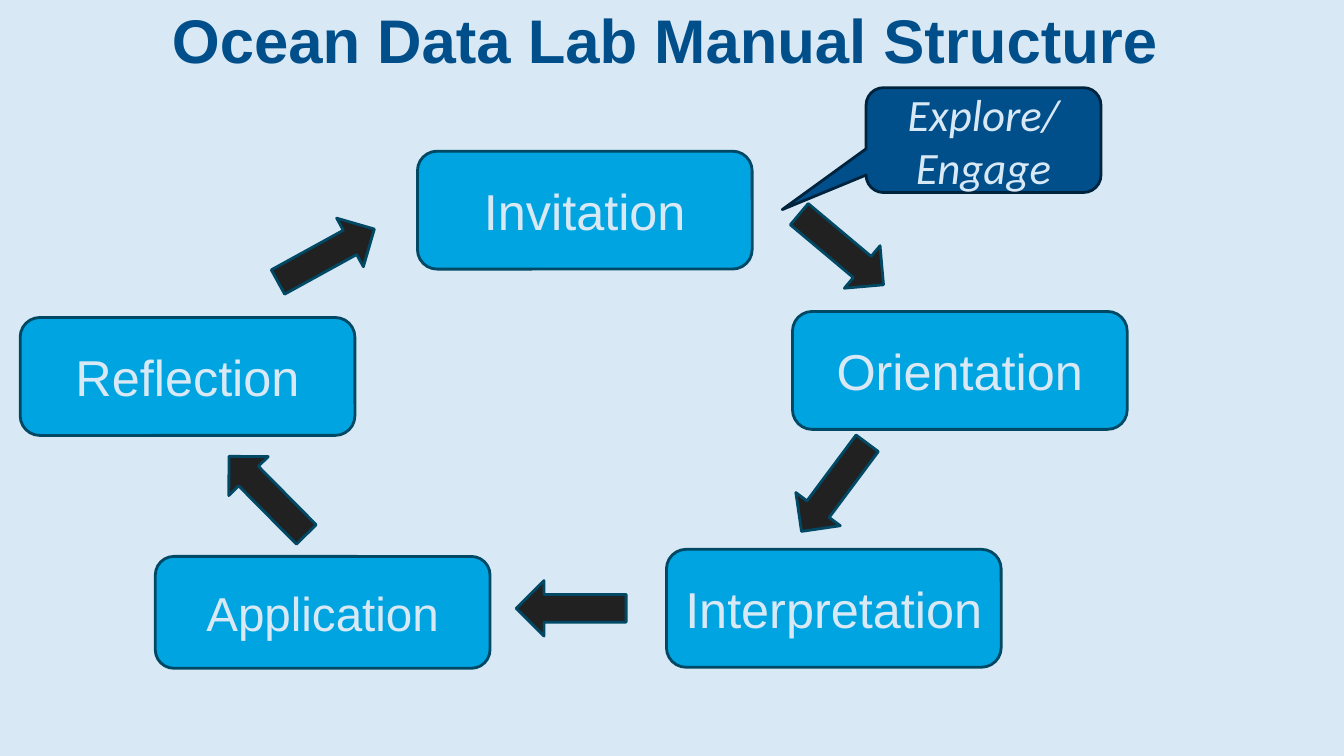
from pptx import Presentation
from pptx.dml.color import RGBColor
from pptx.enum.shapes import MSO_SHAPE as Preset
from pptx.enum.text import MSO_ANCHOR as Anchor, PP_ALIGN as Align
from pptx.util import Inches, Pt

COLORS = {
    "background": "D8E9F5",
    "navy": "004F8B",
    "navy_edge": "00233D",
    "sky": "00A4E1",
    "edge": "004863",
    "arrow": "212121",
}
STEPS = [
    ("Invitation", 4.14, 1.5, 1.17, 36),
    ("Orientation", 7.86, 3.09, 1.17, 36),
    ("Interpretation", 6.61, 5.45, 1.17, 36),
    ("Application", 1.54, 5.52, 1.11, 34),
    ("Reflection", 0.2, 3.15, 1.17, 36),
]
ARROWS = [
    (7.8, 2.2, 40),
    (7.73, 4.56, 126.7),
    (5.12, 5.76, 180),
    (2.11, 4.64, 225.3),
    (2.69, 2.26, 331.2),
]


def color(name):
    """Return the named colour."""
    return RGBColor.from_string(COLORS[name])


def write(shape, text, size, ink="background", font="Arial", anchor=Anchor.MIDDLE):
    """Write one centred paragraph in a shape and return it."""
    frame = shape.text_frame
    frame.word_wrap = True
    frame.vertical_anchor = anchor
    paragraph = frame.paragraphs[0]
    paragraph.text = text
    paragraph.alignment = Align.CENTER
    paragraph.font.size = Pt(size)
    paragraph.font.name = font
    paragraph.font.color.rgb = color(ink)
    return paragraph


def add_figure(slide, preset, box, fill, edge="edge"):
    """Add a filled, outlined preset shape."""
    shape = slide.shapes.add_shape(preset, *map(Inches, box))
    shape.shadow.inherit = False
    shape.fill.solid()
    shape.fill.fore_color.rgb = color(fill)
    shape.line.color.rgb = color(edge)
    shape.line.width = Pt(2)
    return shape


def add_title(slide, text):
    """Add the bold slide title."""
    title = slide.shapes.add_textbox(*map(Inches, (0.85, 0.02, 11.5, 1.45)))
    title.text_frame.margin_top = Inches(0.08)
    paragraph = write(title, text, 44, "navy", anchor=Anchor.TOP)
    paragraph.font.bold = True
    paragraph.line_spacing = 0.9


def add_step(slide, label, left, top, height, size):
    """Add one labelled step of the cycle."""
    box = (left, top, 3.32, height)
    write(add_figure(slide, Preset.ROUNDED_RECTANGLE, box, "sky"), label, size)


def add_arrow(slide, left, top, rotation):
    """Add one turned block arrow between steps."""
    arrow = add_figure(slide, Preset.RIGHT_ARROW, (left, top, 1.09, 0.55), "arrow")
    arrow.rotation = rotation


def add_callout(slide, text):
    """Add the speech callout pointing at the first arrow."""
    box = (8.59, 0.87, 2.33, 1.04)
    callout = add_figure(slide, Preset.ROUNDED_RECTANGULAR_CALLOUT, box, "navy", "navy_edge")
    callout.adjustments[0] = -0.857
    callout.adjustments[1] = 0.663
    write(callout, text, 32, font="Calibri").font.italic = True


def main():
    """Build and save the slide."""
    presentation = Presentation()
    presentation.slide_width = Inches(13.33)
    presentation.slide_height = Inches(7.5)
    slide = presentation.slides.add_slide(presentation.slide_layouts[6])
    slide.background.fill.solid()
    slide.background.fill.fore_color.rgb = color("background")
    add_title(slide, "Ocean Data Lab Manual Structure")
    for step in STEPS:
        add_step(slide, *step)
    for arrow in ARROWS:
        add_arrow(slide, *arrow)
    add_callout(slide, "Explore/ Engage")
    presentation.save("out.pptx")


if __name__ == "__main__":
    main()
